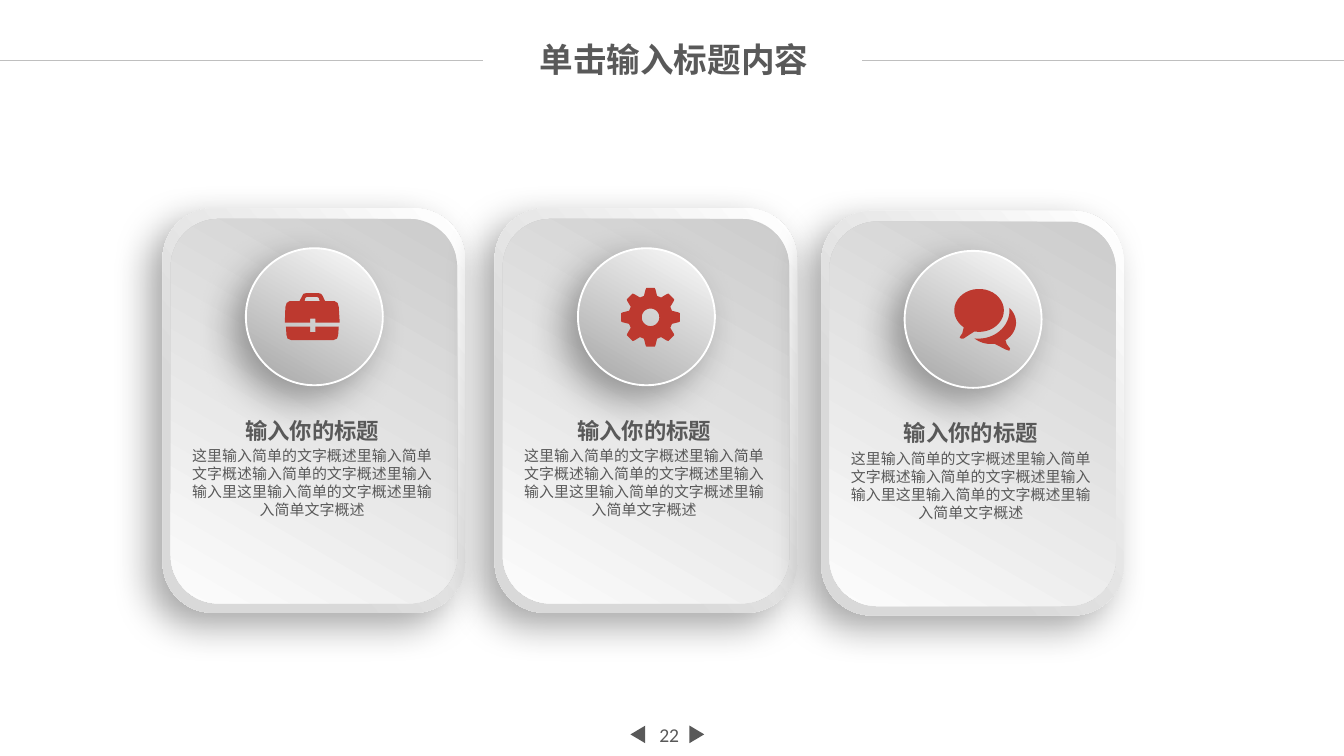
import copy
import math

from lxml import etree
from pptx import Presentation
from pptx import util as u
from pptx.dml.color import RGBColor
from pptx.enum import shapes, text
from pptx.oxml.ns import qn

Pt = u.Pt
GREY_TEXT = RGBColor(0x59, 0x59, 0x59)
RED = RGBColor(0xBD, 0x39, 0x2F)
WHITE = RGBColor(0xFF, 0xFF, 0xFF)
RULE_GREY = RGBColor(0xBF, 0xBF, 0xBF)
FRAME_GREY = RGBColor(0xD9, 0xD9, 0xD9)
PANEL_DARK = RGBColor(0xCC, 0xCC, 0xCC)
DISC_DARK = RGBColor(0xA6, 0xA6, 0xA6)
NEAR_WHITE = RGBColor(0xFC, 0xFC, 0xFC)
CJK_FONT = "Noto Sans CJK SC"
SHAPE = shapes.MSO_SHAPE

CARD_ORIGINS = [(87.1, 111.6), (265, 111.6), (440, 113)]
CARD_TITLE = "输入你的标题"
CARD_BODY = (
    "这里输入简单的文字概述里输入简单文字概述输入简单的文字概述里输入"
    "输入里这里输入简单的文字概述里输入简单文字概述"
)

BRIEFCASE = [
    [(0, 15.8), (0.3, 7.5), (1, 5.3), (2.6, 4.3), (7.9, 4.3), (9.4, 1.4),
     (10, 0.4), (11.5, 0), (18, 0), (19.4, 0.4), (20.2, 1.4), (21.6, 4.3),
     (26.6, 4.3), (28.3, 5.3), (28.9, 7.5), (29.4, 15.8), (16.4, 15.8),
     (16.4, 13.7), (13.5, 13.7), (13.5, 15.8)],
    [(10.6, 4.3), (11, 2.6), (11.7, 2.1), (17.4, 2.1), (18.2, 2.6), (18.7, 4.3)],
    [(0.6, 18), (13.5, 18), (13.5, 20.9), (16.4, 20.9), (16.4, 18), (28.9, 18),
     (28.6, 22.5), (28, 24.4), (26, 25.2), (3.5, 25.2), (1.5, 24.4), (0.9, 22.5)],
]


def arc(center, radii, start, end, steps=36):
    """Points along an ellipse; angles in degrees, clockwise from the right."""
    angles = [math.radians(start + (end - start) * i / steps) for i in range(steps + 1)]
    return [(center[0] + radii[0] * math.cos(a), center[1] + radii[1] * math.sin(a))
            for a in angles]


def gear_contours():
    center = (15.9, 15.9)
    rim = []
    for tooth in range(0, 360, 45):
        for offset, radius in ((-17, 12), (-10, 15.2), (-8, 15.9),
                               (8, 15.9), (10, 15.2), (17, 12)):
            angle = tooth + offset
            rim += arc(center, (radius, radius), angle, angle, 1)[:1]
    return [rim, arc(center, (4.7, 4.7), 0, 360)]


def bubble_contours():
    radii = (13.3, 11.5)
    front = arc((13.3, 11.5), radii, 128, 461)
    front += [(5, 26.6), (3.6, 26.6), (2.9, 25.9), (4.3, 23.8)]
    back = arc((19.8, 18), radii, -43, 55)
    back += [(28.1, 29.5), (29.9, 31.9), (29.5, 33.1), (27.4, 32.4)]
    back += arc((19.8, 18), radii, 82, 132)
    back += arc((13, 11.5), (16.6, 15.1), 90, 0)
    return [front, back]


def add_icon(page, left, top, contours):
    def place(points):
        return [(Pt(left + x), Pt(top + y)) for x, y in points]

    first, *others = map(place, contours)
    builder = page.shapes.build_freeform(*first[0], scale=1.0)
    builder.add_line_segments(first[1:], close=True)
    for points in others:
        builder.move_to(*points[0])
        builder.add_line_segments(points[1:], close=True)
    icon = builder.convert_to_shape()
    icon.fill.solid()
    icon.fill.fore_color.rgb = RED
    icon.line.fill.background()
    icon.shadow.inherit = False


def add_plain_shape(parent, kind, left, top, width, height):
    shape = parent.shapes.add_shape(kind, Pt(left), Pt(top), Pt(width), Pt(height))
    shape.line.fill.background()
    shape.shadow.inherit = False
    return shape


def set_gradient(shape, angle, stops):
    """Fill with (position, colour) stops; the angle runs clockwise."""
    shape.fill.gradient()
    shape.fill.gradient_angle = 360 - angle
    stop_list = shape.fill._fill._gradFill.find(qn("a:gsLst"))
    while len(stop_list) < len(stops):
        stop_list.append(copy.deepcopy(stop_list[-1]))
    for stop, (position, color) in zip(shape.fill.gradient_stops, stops):
        stop.position = position
        stop.color.rgb = color


def add_soft_shadow(shape):
    effects = shape._element.spPr.find(qn("a:effectLst"))
    shadow = etree.SubElement(effects, qn("a:outerShdw"), blurRad=str(Pt(20)),
                              dist=str(Pt(10)), dir=str(136 * 60000),
                              algn="ctr", rotWithShape="0")
    color = etree.SubElement(shadow, qn("a:srgbClr"), val="000000")
    etree.SubElement(color, qn("a:alpha"), val="34000")


def add_span(para, words, size, bold=False, font=CJK_FONT):
    para.alignment = text.PP_ALIGN.CENTER
    span = para.add_run()
    span.text = words
    span.font.size = Pt(size)
    span.font.bold = bold
    span.font.color.rgb = GREY_TEXT
    span.font.name = font
    etree.SubElement(span._r.get_or_add_rPr(), qn("a:ea"), typeface=font)


def add_text_box(page, left, top, width, height):
    box = page.shapes.add_textbox(Pt(left), Pt(top), Pt(width), Pt(height))
    box.text_frame.word_wrap = True
    return box.text_frame


def add_card(page, left, top):
    group = page.shapes.add_group_shape()
    frame = add_plain_shape(group, SHAPE.ROUNDED_RECTANGLE, left, top, 162, 216.7)
    set_gradient(frame, 140, [(0, FRAME_GREY), (0.01, WHITE), (0.7, FRAME_GREY)])
    add_soft_shadow(frame)
    panel = add_plain_shape(group, SHAPE.ROUNDED_RECTANGLE,
                            left + 4.4, top + 5.7, 153.4, 206)
    set_gradient(panel, 120, [(0, PANEL_DARK), (1, NEAR_WHITE)])

    disc = add_plain_shape(page, SHAPE.OVAL, left + 44.6, top + 21.4, 73.4, 73.4)
    set_gradient(disc, 120, [(0, NEAR_WHITE), (1, DISC_DARK)])
    disc.line.color.rgb = WHITE
    disc.line.width = Pt(1)
    add_soft_shadow(disc)

    box = add_text_box(page, left + 8.5, top + 108, 143.3, 70.5)
    heading = box.paragraphs[0]
    heading.line_spacing = Pt(14.5)
    add_span(heading, CARD_TITLE, 12, bold=True)
    body = box.add_paragraph()
    body.line_spacing = Pt(9.65)
    body.space_before = Pt(1.6)
    add_span(body, CARD_BODY, 8)


def add_title(page):
    title = page.shapes.title
    title.left, title.top, title.width, title.height = Pt(260), Pt(17), Pt(202), Pt(29)
    title.text_frame.vertical_anchor = text.MSO_ANCHOR.MIDDLE
    add_span(title.text_frame.paragraphs[0], "单击输入标题内容", 18, bold=True)


def add_rule(page, start, end):
    rule = page.shapes.add_connector(shapes.MSO_CONNECTOR.STRAIGHT,
                                     Pt(start), Pt(32.4), Pt(end), Pt(32.4))
    rule.line.color.rgb = RULE_GREY
    rule.line.width = Pt(0.75)
    etree.SubElement(rule._element.spPr, qn("a:effectLst"))


def add_page_number(page):
    for left, rotation in ((368.6, 90), (337, 270)):
        arrow = add_plain_shape(page, SHAPE.ISOSCELES_TRIANGLE, left, 389.5, 9.4, 7.9)
        arrow.rotation = rotation
        arrow.fill.solid()
        arrow.fill.fore_color.rgb = GREY_TEXT
    box = add_text_box(page, 342.7, 383, 31.7, 21.6)
    box.vertical_anchor = text.MSO_ANCHOR.MIDDLE
    add_span(box.paragraphs[0], "22", 10.5, font="Calibri")


def main():
    deck = Presentation()
    deck.slide_width, deck.slide_height = Pt(720), Pt(405)
    page = deck.slides.add_slide(deck.slide_layouts[5])
    add_page_number(page)
    for left, top in CARD_ORIGINS:
        add_card(page, left, top)
    add_icon(page, 152.6, 157, BRIEFCASE)
    add_icon(page, 332.6, 154.1, gear_contours())
    add_icon(page, 511.2, 154.8, bubble_contours())
    add_title(page)
    add_rule(page, 0, 258.5)
    add_rule(page, 462, 720)
    deck.save("out.pptx")


if __name__ == "__main__":
    main()
